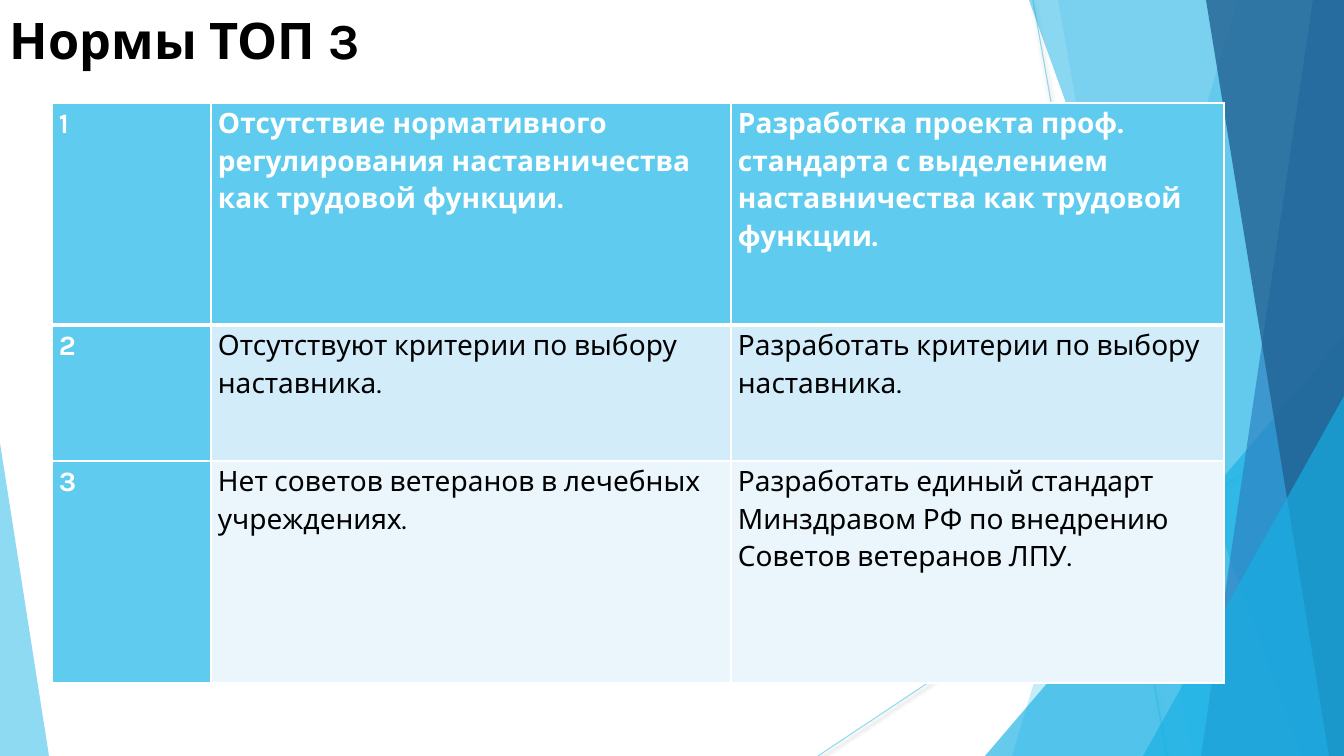
import pptx
import pptx.util
import pptx.dml.color
import pptx.enum.shapes
import pptx.enum.text
import pptx.oxml
import pptx.oxml.ns

SCALE = 12192000 / 1344
WIDTH, HEIGHT = 1344, 756
COLORS = {"sky": "5FCBEF", "cyan": "17B0E4", "blue": "2E83C3", "navy": "226292",
          "band": "D2ECF9", "pale": "EAF6FC", "white": "FFFFFF", "black": "000000"}
NAMESPACE = pptx.oxml.ns.nsdecls("a")


def px(*lengths):
    """Turn pixels into a list of EMU lengths."""
    return [pptx.util.Emu(round(length * SCALE)) for length in lengths]


def write(paragraph, text, **style):
    """Add a run in the slide font with the given format values."""
    run = paragraph.add_run()
    run.text = text
    color = style.pop("color")
    for name, value in {"name": "Karla", **style}.items():
        setattr(run.font, name, value)
    run.font.color.rgb = pptx.dml.color.RGBColor.from_string(COLORS[color])


presentation = pptx.Presentation()
presentation.slide_width, presentation.slide_height = px(WIDTH, HEIGHT)
slide = presentation.slides.add_slide(presentation.slide_layouts[6])
shapes = slide.shapes

# Thin lines with a soft shadow
for ends in [(1033, 0, 1167, HEIGHT), (WIDTH, 406, 818, HEIGHT)]:
    line = shapes.add_connector(pptx.enum.shapes.MSO_CONNECTOR.STRAIGHT, *px(*ends))
    line.line.width = pptx.util.Pt(0.75)
    properties = line._element.spPr
    line.line.color.rgb = pptx.dml.color.RGBColor.from_string(COLORS["sky"])
    properties.find(".//" + pptx.oxml.ns.qn("a:srgbClr")).append(
        pptx.oxml.parse_xml(f'<a:alpha {NAMESPACE} val="70000"/>'))
    properties.append(pptx.oxml.parse_xml(
        f'<a:effectLst {NAMESPACE}><a:outerShdw blurRad="39370" dist="20320" dir="5400000">'
        f'<a:srgbClr val="{COLORS["black"]}"><a:alpha val="38000"/></a:srgbClr>'
        '</a:outerShdw></a:effectLst>'))

# Panels: (top x, bottom x) reaching the right edge
# Triangles: (left, top, width, height, apex)
facets = [
    ((1238, 1012), "sky", 36),
    ((1058, 1192), "sky", 20),
    ((985, 336, 359, 420, 1), "cyan", 66),
    ((1029, 1301), "cyan", 50),
    ((1313, 1201), "blue", 70),
    ((1206, 1329), "navy", 80),
    ((1143, 396, 201, 360, 1), "cyan", 66),
    ((0, 443, 49, 313, 0), "sky", 70),
]
for outline, color, opacity in facets:
    if len(outline) == 2:
        top_x, bottom_x = outline
        builder = shapes.build_freeform(top_x, 0, scale=SCALE)
        builder.add_line_segments([(WIDTH, 0), (WIDTH, HEIGHT), (bottom_x, HEIGHT)])
        facet = builder.convert_to_shape()
    else:
        facet = shapes.add_shape(
            pptx.enum.shapes.MSO_SHAPE.ISOSCELES_TRIANGLE, *px(*outline[:4]))
        facet.adjustments[0] = outline[4]
    facet.shadow.inherit = False
    facet.line.fill.background()
    facet.fill.solid()
    facet.fill.fore_color.rgb = pptx.dml.color.RGBColor.from_string(COLORS[color])
    facet._element.spPr.find(".//" + pptx.oxml.ns.qn("a:srgbClr")).append(
        pptx.oxml.parse_xml(f'<a:alpha {NAMESPACE} val="{opacity * 1000}"/>'))

title = shapes.add_textbox(*px(0, 4, 948, 145)).text_frame
title.word_wrap = True
title.vertical_anchor = pptx.enum.text.MSO_ANCHOR.TOP
write(title.paragraphs[0], "Нормы ТОП 3", size=pptx.util.Pt(36), bold=True, color="black")

rows = [
    ("1", "Отсутствие нормативного регулирования наставничества как трудовой функции.",
     "Разработка проекта проф. стандарта с выделением наставничества как трудовой функции."),
    ("2", "Отсутствуют критерии по выбору наставника.",
     "Разработать критерии по выбору наставника."),
    ("3", "Нет советов ветеранов в лечебных учреждениях.",
     "Разработать единый стандарт Минздравом РФ по внедрению Советов ветеранов ЛПУ."),
]
column_widths = px(159, 520, 493)
row_heights = px(222, 136, 222)
row_fills = ["sky", "band", "pale"]
side_margin, = px(7)
table = shapes.add_table(3, 3, *px(52, 103, 1172, 580)).table
for column, width in zip(table.columns, column_widths):
    column.width = width
for row, height in zip(table.rows, row_heights):
    row.height = height

for row_index, texts in enumerate(rows):
    for column_index, text in enumerate(texts):
        cell = table.cell(row_index, column_index)
        heading = row_index == 0 or column_index == 0
        for name, value in {"margin_left": side_margin, "margin_right": side_margin,
                            "margin_top": 0, "margin_bottom": 0}.items():
            setattr(cell, name, value)
        cell.fill.solid()
        cell.fill.fore_color.rgb = pptx.dml.color.RGBColor.from_string(
            COLORS["sky" if heading else row_fills[row_index]])
        paragraph = cell.text_frame.paragraphs[0]
        paragraph.line_spacing = 1.15
        write(paragraph, text, size=pptx.util.Pt(20), bold=heading,
              color="white" if heading else "black")
        border_widths = {"L": 1, "R": 1, "T": 3 if row_index == 1 else 1,
                         "B": 3 if row_index == 0 else 1}
        for position, (side, points) in enumerate(border_widths.items()):
            cell._tc.get_or_add_tcPr().insert(position, pptx.oxml.parse_xml(
                f'<a:ln{side} {NAMESPACE} w="{pptx.util.Pt(points)}"><a:solidFill>'
                f'<a:srgbClr val="{COLORS["white"]}"/></a:solidFill></a:ln{side}>'))

presentation.save("out.pptx")
